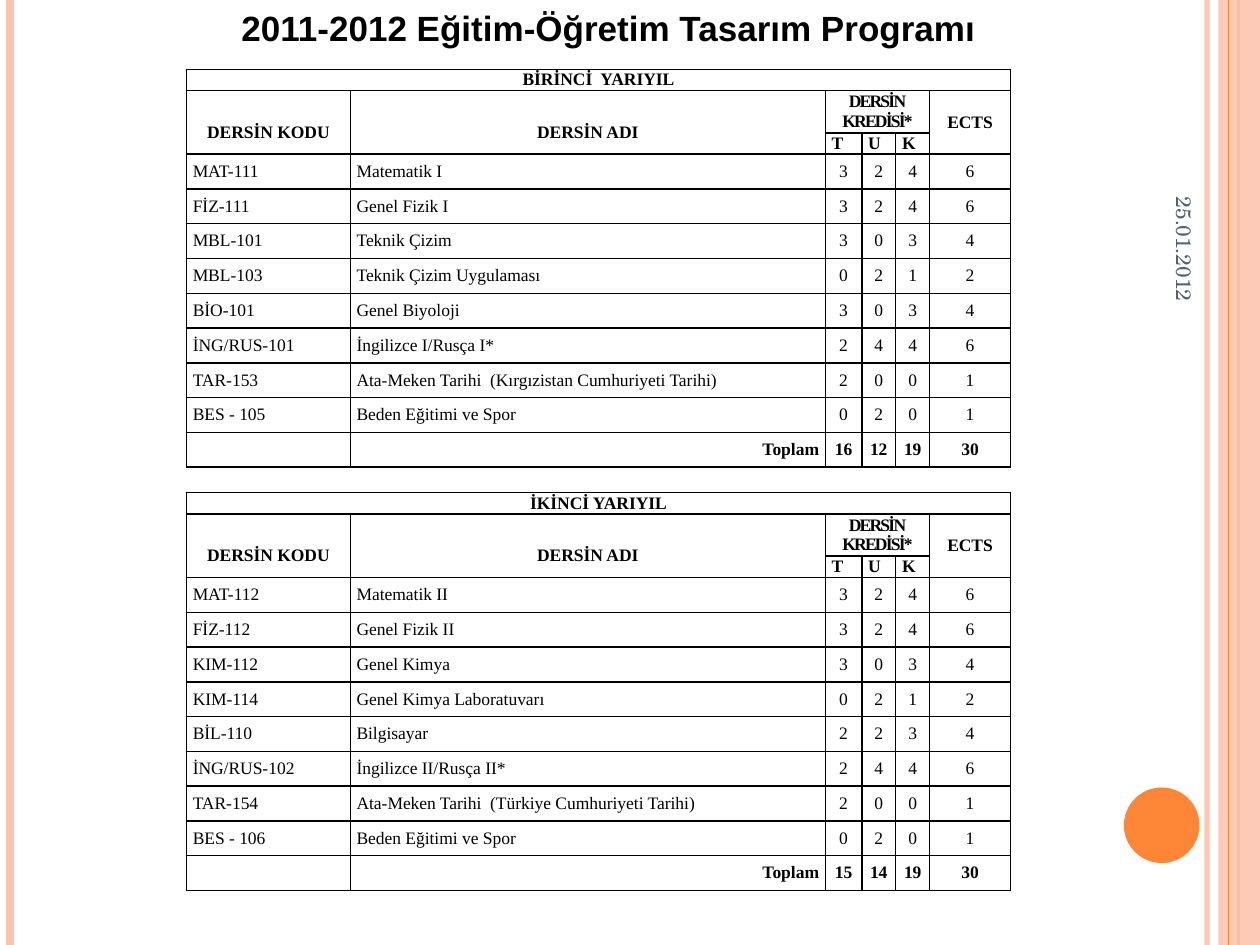
from lxml import etree
from pptx import Presentation
from pptx.dml.color import RGBColor
from pptx.enum.shapes import MSO_CONNECTOR, MSO_SHAPE
from pptx.enum.text import MSO_ANCHOR, MSO_AUTO_SIZE, PP_ALIGN
from pptx.oxml.ns import qn
from pptx.util import Inches, Pt

LEFT, CENTER, RIGHT = PP_ALIGN.LEFT, PP_ALIGN.CENTER, PP_ALIGN.RIGHT
MIDDLE = MSO_ANCHOR.MIDDLE
W, H = 10, 7.5
PEACH, ORANGE, BLACK, SLATE = "FEC3AE", "FE8637", "000000", "575F6D"
SERIF = "Times New Roman"

# Table grid, in inches
TABLE_LEFT = 1.48
COLS = [1.3, 3.77, 0.29, 0.27, 0.27, 0.64]
HEAD_ROWS = [0.17, 0.33, 0.17]
BODY_ROW = 0.276
LINE_SHIFT = 0.16  # lowers the code and name headings by half a line

# Each semester: heading, top, courses (code, name, T, U, K, ECTS), totals
SEMESTERS = [
    ("BİRİNCİ  YARIYIL", 0.55, [
        ("MAT-111", "Matematik I", 3, 2, 4, 6),
        ("FİZ-111", "Genel Fizik I", 3, 2, 4, 6),
        ("MBL-101", "Teknik Çizim", 3, 0, 3, 4),
        ("MBL-103", "Teknik Çizim Uygulaması", 0, 2, 1, 2),
        ("BİO-101", "Genel Biyoloji", 3, 0, 3, 4),
        ("İNG/RUS-101", "İngilizce I/Rusça I*", 2, 4, 4, 6),
        ("TAR-153", "Ata-Meken Tarihi  (Kırgızistan Cumhuriyeti Tarihi)", 2, 0, 0, 1),
        ("BES - 105", "Beden Eğitimi ve Spor", 0, 2, 0, 1),
    ], (16, 12, 19, 30)),
    ("İKİNCİ YARIYIL", 3.91, [
        ("MAT-112", "Matematik II", 3, 2, 4, 6),
        ("FİZ-112", "Genel Fizik II", 3, 2, 4, 6),
        ("KIM-112", "Genel Kimya", 3, 0, 3, 4),
        ("KIM-114", "Genel Kimya Laboratuvarı", 0, 2, 1, 2),
        ("BİL-110", "Bilgisayar", 2, 2, 3, 4),
        ("İNG/RUS-102", "İngilizce II/Rusça II*", 2, 4, 4, 6),
        ("TAR-154", "Ata-Meken Tarihi  (Türkiye Cumhuriyeti Tarihi)", 2, 0, 0, 1),
        ("BES - 106", "Beden Eğitimi ve Spor", 0, 2, 0, 1),
    ], (15, 14, 19, 30)),
]


def set_color(color, value, alpha=None):
    color.rgb = RGBColor.from_string(value)
    if alpha is not None:
        srgb = color._xFill.find(qn("a:srgbClr"))
        etree.SubElement(srgb, qn("a:alpha")).set("val", str(alpha * 1000))


def style(p, size, font, color, bold=False, align=LEFT):
    p.alignment = align
    p.font.size = Pt(size)
    p.font.name = font
    p.font.bold = bold
    set_color(p.font.color, color)


def add_vline(slide, x, color, width, alpha=None):
    s = slide.shapes.add_connector(
        MSO_CONNECTOR.STRAIGHT, Inches(x), 0, Inches(x), Inches(H))
    s.line.width = Pt(width)
    s.line.fill.solid()
    set_color(s.line.fill.fore_color, color, alpha)
    etree.SubElement(s._element.spPr, qn("a:effectLst"))


def add_shape(slide, kind, x, y, w, h, color, alpha=None):
    sp = slide.shapes.add_shape(kind, Inches(x), Inches(y), Inches(w), Inches(h))
    sp.shadow.inherit = False
    sp.fill.solid()
    set_color(sp.fill.fore_color, color, alpha)
    sp.line.fill.background()


def add_text(slide, text, x, y, w, h, wrap, *look):
    sp = slide.shapes.add_textbox(Inches(x), Inches(y), Inches(w), Inches(h))
    tf = sp.text_frame
    tf.word_wrap = wrap
    tf.vertical_anchor = MIDDLE
    tf.text = text
    style(tf.paragraphs[0], *look)
    return sp


def format_cell(cell):
    """Thin black borders, no fill, tight margins and a small line height."""
    cell.margin_left = cell.margin_right = Inches(0.05)
    cell.margin_top = cell.margin_bottom = 0
    cell.vertical_anchor = MIDDLE
    tcPr = cell._tc.get_or_add_tcPr()
    for side in ("a:lnL", "a:lnR", "a:lnT", "a:lnB"):
        ln = etree.SubElement(tcPr, qn(side), w=str(Pt(1)))
        fill = etree.SubElement(ln, qn("a:solidFill"))
        etree.SubElement(fill, qn("a:srgbClr"), val=BLACK)
    cell.fill.background()
    end = cell.text_frame.paragraphs[0]._p.get_or_add_endParaRPr()
    end.set("sz", "1000")


def write(cell, text, align=CENTER, bold=False, spacing=None):
    cell.text = str(text)
    for p in cell.text_frame.paragraphs:
        style(p, 10, SERIF, BLACK, bold, align)
        if spacing is not None:
            for r in p.runs:
                r._r.get_or_add_rPr().set("spc", str(spacing * 100))


def add_semester(slide, heading, top, courses, totals):
    heights = HEAD_ROWS + [BODY_ROW] * (len(courses) + 1)
    table = slide.shapes.add_table(
        len(heights), len(COLS), Inches(TABLE_LEFT), Inches(top),
        Inches(sum(COLS)), Inches(sum(heights))).table
    table.first_row = table.horz_banding = False
    for column, width in zip(table.columns, COLS):
        column.width = Inches(width)
    for row, height in zip(table.rows, heights):
        row.height = Inches(height)
    for cell in table.iter_cells():
        format_cell(cell)

    # Headings
    for r1, c1, r2, c2 in [(0, 0, 0, 5), (1, 0, 2, 0), (1, 1, 2, 1),
                           (1, 2, 1, 4), (1, 5, 2, 5)]:
        table.cell(r1, c1).merge(table.cell(r2, c2))
    write(table.cell(0, 0), heading, bold=True)
    for c, text in enumerate(["DERSİN KODU", "DERSİN ADI"]):
        write(table.cell(1, c), text, bold=True)
        table.cell(1, c).margin_top = Inches(LINE_SHIFT)
    write(table.cell(1, 2), "DERSİN\nKREDİSİ*", bold=True, spacing=-1)
    write(table.cell(1, 5), "ECTS", bold=True)
    for c, text in enumerate("TUK", start=2):
        write(table.cell(2, c), text, LEFT, bold=True)

    # Courses
    for r, course in enumerate(courses, start=len(HEAD_ROWS)):
        for c, value in enumerate(course):
            write(table.cell(r, c), value, LEFT if c < 2 else CENTER)

    # Totals
    last = len(heights) - 1
    write(table.cell(last, 1), "Toplam", RIGHT, bold=True)
    for c, value in enumerate(totals, start=2):
        write(table.cell(last, c), value, bold=True)


def main():
    prs = Presentation()
    prs.slide_width, prs.slide_height = Inches(W), Inches(H)
    slide = prs.slides.add_slide(prs.slide_layouts[6])

    # Side stripes and disc
    add_vline(slide, 9.58, PEACH, 3, 93)
    add_vline(slide, 0.08, PEACH, 4.5)
    add_vline(slide, 9.83, ORANGE, 1.5)
    add_shape(slide, MSO_SHAPE.RECTANGLE, 9.67, 0, 0.33, H, PEACH, 87)
    add_vline(slide, 9.75, ORANGE, 0.75)
    add_shape(slide, MSO_SHAPE.OVAL, 8.92, 6.25, 0.6, 0.6, ORANGE)

    # Title
    title = add_text(slide, "2011-2012 Eğitim-Öğretim Tasarım Programı",
                     1.8, 0, 6.06, 0.44, False, 20, "Arial", BLACK, True, CENTER)
    title.text_frame.auto_size = MSO_AUTO_SIZE.SHAPE_TO_FIT_TEXT

    # Semester tables
    for semester in SEMESTERS:
        add_semester(slide, *semester)

    # Date along the right edge
    date = add_text(slide, "25.01.2012", 8.3, 1.18, 2.2, 0.42, True,
                    12, "TeX Gyre Schola", SLATE, False, RIGHT)
    date.rotation = 90

    prs.save("out.pptx")


if __name__ == "__main__":
    main()
